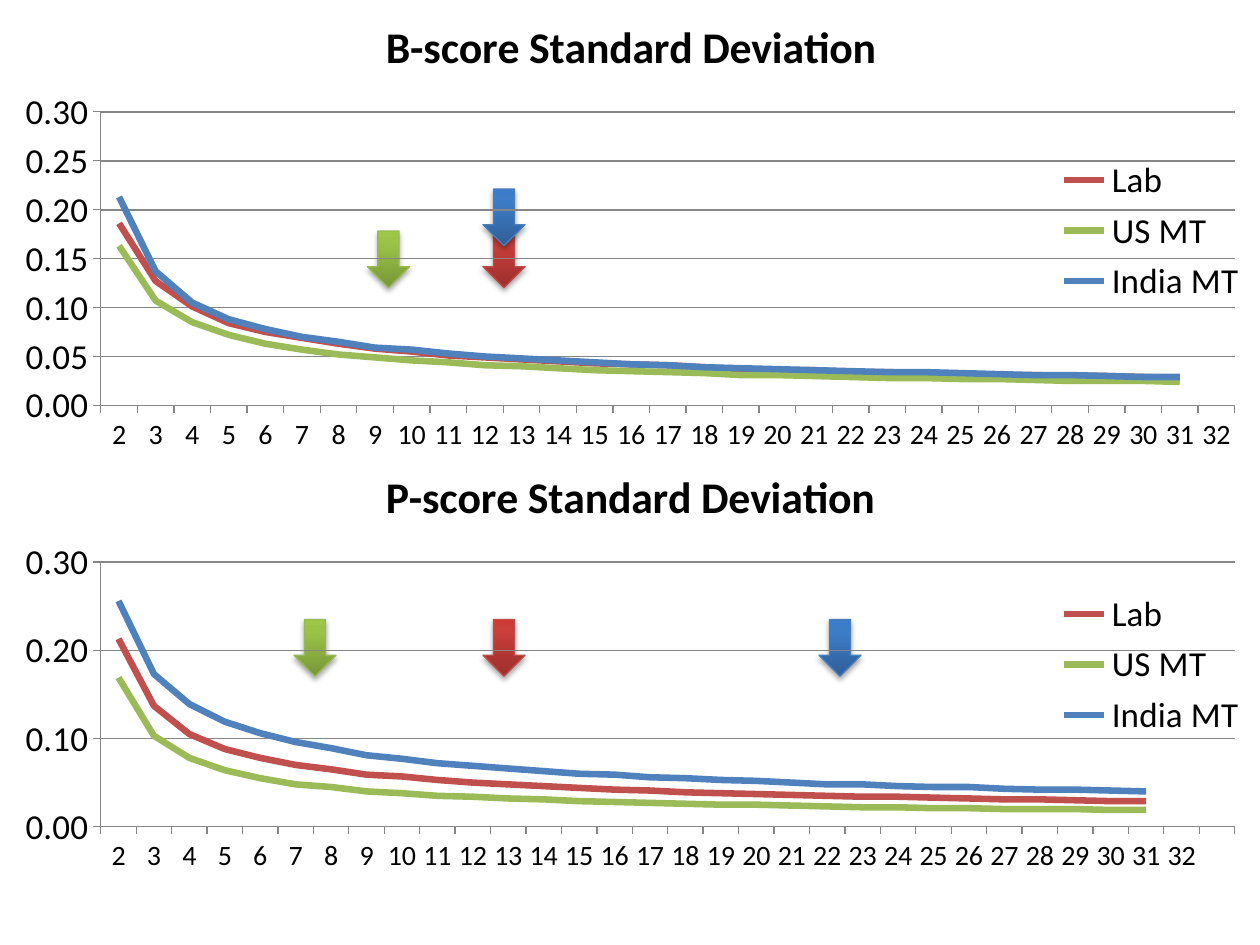
from dataclasses import dataclass

from lxml import etree
from pptx import Presentation
from pptx.chart.data import CategoryChartData
from pptx.dml.color import RGBColor
from pptx.enum.chart import XL_CHART_TYPE, XL_LEGEND_POSITION, XL_TICK_MARK
from pptx.enum.shapes import MSO_SHAPE
from pptx.oxml import parse_xml
from pptx.oxml.ns import qn
from pptx.util import Pt

LINE_CHART = XL_CHART_TYPE.LINE
LEGEND_RIGHT = XL_LEGEND_POSITION.RIGHT
TICK_OUTSIDE = XL_TICK_MARK.OUTSIDE
DOWN_ARROW = MSO_SHAPE.DOWN_ARROW

FONT = "Calibri"
BLACK = RGBColor(0x00, 0x00, 0x00)
AXIS_GRAY = RGBColor(0x86, 0x86, 0x86)
LAB_RED = RGBColor(0xC0, 0x50, 0x4D)
US_GREEN = RGBColor(0x9B, 0xBB, 0x59)
INDIA_BLUE = RGBColor(0x4F, 0x81, 0xBD)
SERIES_COLORS = {"Lab": LAB_RED, "US MT": US_GREEN, "India MT": INDIA_BLUE}
SERIES_ORDER = ["India MT", "Lab", "US MT"]

A_NS = 'xmlns:a="http://schemas.openxmlformats.org/drawingml/2006/main"'
C_NS = 'xmlns:c="http://schemas.openxmlformats.org/drawingml/2006/chart"'


@dataclass
class ArrowStyle:
    outline: RGBColor
    stops: tuple[RGBColor, RGBColor, RGBColor]  # at 0, 80 and 100 percent


@dataclass
class Arrow:
    left: float
    top: float
    style: ArrowStyle


@dataclass
class ScoreChart:
    title: str
    top: float
    height: float
    categories: list[str]
    major_unit: float
    grid_width: float
    plot_box: tuple[float, ...]  # fractions of the chart: x, y, w, h
    legend_box: tuple[float, ...]
    series: dict[str, list[float]]


def arrow_style(outline: str, *stops: str) -> ArrowStyle:
    return ArrowStyle(RGBColor.from_string(outline),
                      tuple(RGBColor.from_string(stop) for stop in stops))


RED_ARROW = arrow_style("BF4C48", "9C2F2D", "CB3E3A", "CE3B37")
GREEN_ARROW = arrow_style("98B955", "779737", "9BC348", "9DC746")
BLUE_ARROW = arrow_style("4B7EBC", "2F5F99", "3D7CC7", "3A7CCB")

ARROWS = [
    Arrow(276, 132, RED_ARROW), Arrow(276, 354, RED_ARROW),
    Arrow(168, 354, GREEN_ARROW), Arrow(210, 132, GREEN_ARROW),
    Arrow(276, 108, BLUE_ARROW), Arrow(468, 354, BLUE_ARROW),
]

COUNTS = [str(n) for n in range(2, 33)]

# The P-score of Lab and the B-score of India MT share the same values
SHARED = [0.213, 0.137, 0.105, 0.088, 0.078, 0.07, 0.065, 0.059, 0.057, 0.053,
          0.05, 0.048, 0.046, 0.044, 0.042, 0.041, 0.039, 0.038, 0.037, 0.036,
          0.035, 0.034, 0.034, 0.033, 0.032, 0.031, 0.031, 0.03, 0.029, 0.029]

P_SCORE = ScoreChart(
    "P-score Standard Deviation", 258, 246, COUNTS + [""], 0.1, 0.75,
    (0.08, 0.257, 0.9, 0.615), (0.834, 0.31, 0.16, 0.37),
    {"Lab": SHARED,
     "US MT": [0.169, 0.103, 0.078, 0.064, 0.055, 0.048, 0.045, 0.04, 0.038, 0.035,
               0.034, 0.032, 0.031, 0.029, 0.028, 0.027, 0.026, 0.025, 0.025, 0.024,
               0.023, 0.022, 0.022, 0.021, 0.021, 0.02, 0.02, 0.02, 0.019, 0.019],
     "India MT": [0.256, 0.173, 0.139, 0.119, 0.106, 0.096, 0.089, 0.081, 0.077, 0.072,
                  0.069, 0.066, 0.063, 0.06, 0.059, 0.056, 0.055, 0.053, 0.052, 0.05,
                  0.048, 0.048, 0.046, 0.045, 0.045, 0.043, 0.042, 0.042, 0.041, 0.04]})

B_SCORE = ScoreChart(
    "B-score Standard Deviation", 0, 264, COUNTS, 0.05, 1,
    (0.08, 0.242, 0.9, 0.636), (0.834, 0.327, 0.16, 0.345),
    {"Lab": [0.186, 0.127, 0.101, 0.084, 0.075, 0.069, 0.063, 0.058, 0.055, 0.051,
             0.049, 0.047, 0.045, 0.043, 0.042, 0.041, 0.039, 0.037, 0.036, 0.036,
             0.034, 0.034, 0.033, 0.032, 0.031, 0.031, 0.03, 0.03, 0.029, 0.028],
     "US MT": [0.163, 0.107, 0.085, 0.072, 0.063, 0.057, 0.052, 0.049, 0.046, 0.044,
               0.041, 0.04, 0.038, 0.036, 0.035, 0.034, 0.033, 0.031, 0.031, 0.03,
               0.029, 0.028, 0.028, 0.027, 0.027, 0.026, 0.025, 0.025, 0.025, 0.024],
     "India MT": SHARED})


def format_font(font, size: float, bold: bool = False) -> None:
    font.name, font.size, font.bold = FONT, Pt(size), bold
    font.color.rgb = BLACK


def write_text(text_frame, text: str, *, size: float, bold: bool = False) -> None:
    text_frame.text = text
    format_font(text_frame.paragraphs[0].runs[0].font, size, bold)


def place(part, index: int, box: tuple[float, ...], inner: bool = False) -> None:
    """Give a chart part a manual layout in fractions of the chart."""
    for old in part.findall(qn("c:layout")):
        part.remove(old)
    target = '<c:layoutTarget val="inner"/>' if inner else ""
    modes = '<c:xMode val="edge"/><c:yMode val="edge"/>'
    sizes = "".join(f'<c:{key} val="{value}"/>' for key, value in zip("xywh", box))
    part.insert(index, parse_xml(
        f"<c:layout {C_NS}><c:manualLayout>{target}{modes}{sizes}"
        "</c:manualLayout></c:layout>"))


def draw_arrow(shapes, arrow: Arrow) -> None:
    shape = shapes.add_shape(DOWN_ARROW, Pt(arrow.left), Pt(arrow.top), Pt(24), Pt(32.4))
    shape.line.color.rgb = arrow.style.outline
    shape.line.width = Pt(0.75)
    # Three-stop gradient, dark at the bottom
    shape.fill.gradient()
    shape.fill.gradient_angle = 90
    stop_list = shape.element.spPr.find(qn("a:gradFill")).find(qn("a:gsLst"))
    for old in list(stop_list):
        stop_list.remove(old)
    for percent, color in zip((0, 80, 100), arrow.style.stops):
        stop = etree.SubElement(stop_list, qn("a:gs"), pos=str(percent * 1000))
        etree.SubElement(stop, qn("a:srgbClr"), val=str(color))
    # Soft shadow below
    shape.element.spPr.append(parse_xml(
        f'<a:effectLst {A_NS}><a:outerShdw blurRad="{Pt(3.1)}" dist="{Pt(1.8)}" '
        'dir="5400000" rotWithShape="0"><a:srgbClr val="000000">'
        '<a:alpha val="35000"/></a:srgbClr></a:outerShdw></a:effectLst>'))


def draw_chart(shapes, score: ScoreChart) -> None:
    data = CategoryChartData(number_format="0.000")
    data.categories = score.categories
    for name, values in score.series.items():
        data.add_series(name, values)
    chart = shapes.add_chart(LINE_CHART, Pt(0), Pt(score.top), Pt(720),
                             Pt(score.height), data).chart
    format_font(chart.font, 10)

    # Title, legend and plot area
    write_text(chart.chart_title.text_frame, score.title, size=25, bold=True)
    title = chart.chart_title.element
    place(title, 1, (0.3, 0.02))
    title.find(qn("c:overlay")).set("val", "1")
    chart.has_legend = True
    chart.legend.position = LEGEND_RIGHT
    chart.legend.include_in_layout = True
    format_font(chart.legend.font, 20)
    place(chart.legend._element, 1, score.legend_box)
    chart_body = chart.element.find(qn("c:chart"))
    place(chart_body.find(qn("c:plotArea")), 0, score.plot_box, inner=True)
    # Clear background, so the arrows behind show
    chart_body.addnext(parse_xml(
        f"<c:spPr {C_NS} {A_NS}><a:noFill/><a:ln><a:noFill/></a:ln></c:spPr>"))

    # Axes
    for axis, size in ((chart.category_axis, 16), (chart.value_axis, 20)):
        format_font(axis.tick_labels.font, size)
        axis.major_tick_mark = TICK_OUTSIDE
        axis.format.line.color.rgb = AXIS_GRAY
        axis.format.line.width = Pt(0.75)
    value_axis = chart.value_axis
    value_axis.minimum_scale, value_axis.maximum_scale = 0, 0.3
    value_axis.major_unit = score.major_unit
    value_axis.tick_labels.number_format = "0.00"
    value_axis.tick_labels.number_format_is_linked = False
    value_axis.has_major_gridlines = True
    grid_line = value_axis.major_gridlines.format.line
    grid_line.color.rgb, grid_line.width = AXIS_GRAY, Pt(score.grid_width)

    # Series: India MT is first in order, yet stays last in the file to lie on top
    chart.plots[0].vary_by_categories = False
    for series in list(chart.plots[0].series):
        series.smooth = False
        series.format.line.color.rgb = SERIES_COLORS[series.name]
        series.format.line.width = Pt(3.75)
        order = SERIES_ORDER.index(series.name)
        series._element.find(qn("c:order")).set("val", str(order))


def main() -> None:
    deck = Presentation()
    deck.slide_width, deck.slide_height = Pt(720), Pt(540)
    slide = deck.slides.add_slide(deck.slide_layouts[6])
    for arrow in ARROWS:
        draw_arrow(slide.shapes, arrow)
    for score in (P_SCORE, B_SCORE):
        draw_chart(slide.shapes, score)
    deck.save("out.pptx")


if __name__ == "__main__":
    main()
